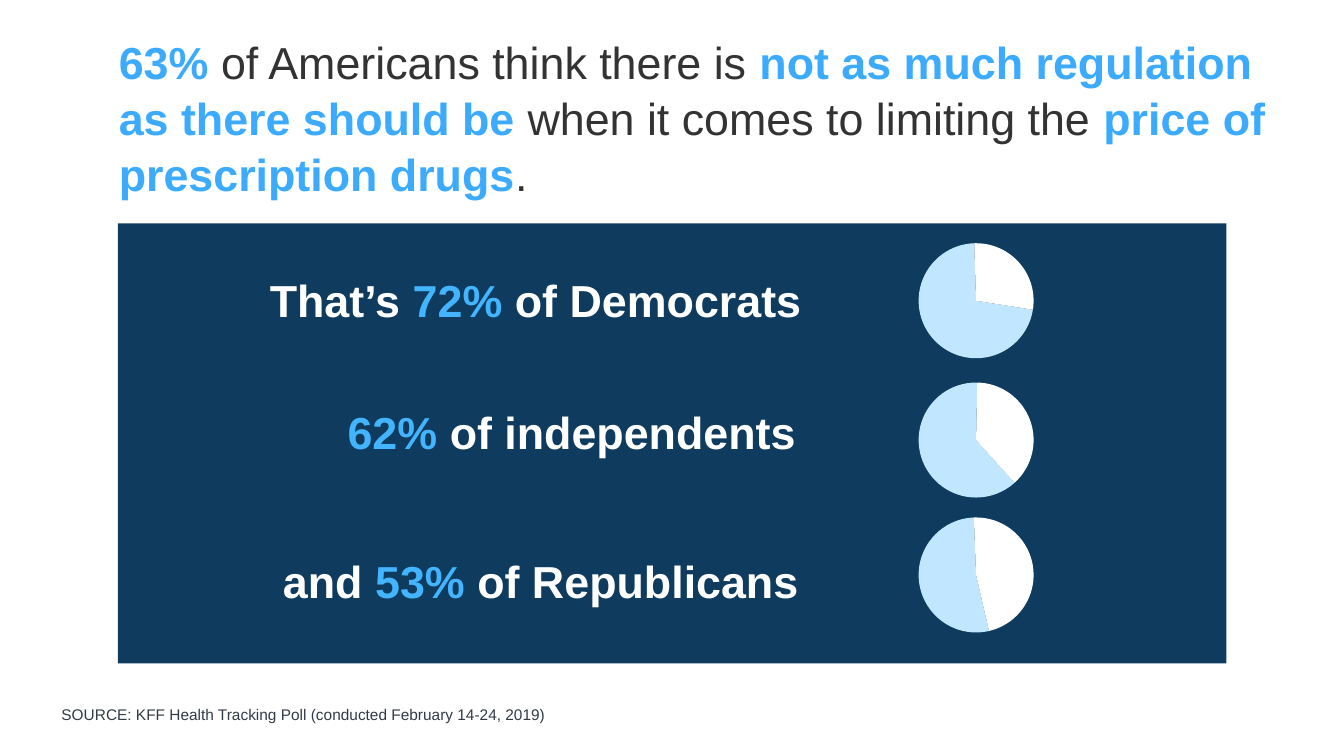
from lxml import etree
from pptx import Presentation
from pptx.chart.data import CategoryChartData
from pptx.dml.color import RGBColor
from pptx.enum.chart import XL_CHART_TYPE
from pptx.enum.shapes import MSO_SHAPE
from pptx.enum.text import MSO_ANCHOR, PP_ALIGN
from pptx.oxml.ns import qn
from pptx.util import Cm, Pt

WHITE, DARK, NAVY = "FFFFFF", "333333", "0E3B5E"
TITLE_BLUE, LABEL_BLUE, PIE_BLUE = "3CABFD", "43B4FF", "C1E6FF"
CHART_W, CHART_H = 11.48, 3.76
PIE_CENTER_X, PIE_SIZE = 24.6, 2.9


def rgb(color):
    return RGBColor.from_string(color)


def write(tf, runs, size):
    """Fill the first paragraph with (text, colour, bold) runs."""
    tf.word_wrap = True
    p = tf.paragraphs[0]
    p.alignment = PP_ALIGN.LEFT
    p.font.name = "Arial"
    p.font.size = Pt(size)
    for text, color, bold in runs:
        r = p.add_run()
        r.text = text
        r.font.color.rgb = rgb(color)
        r.font.bold = bold
    return p


prs = Presentation()
prs.slide_width, prs.slide_height = Cm(33.87), Cm(19.05)
s = prs.slides.add_slide(prs.slide_layouts[5])

# Title
title = s.shapes.title
title.left, title.top, title.width, title.height = Cm(2.74), Cm(0.7), Cm(29.85), Cm(2.54)
title.text_frame.vertical_anchor = MSO_ANCHOR.TOP
p = write(title.text_frame, [
    ("63% ", TITLE_BLUE, True),
    ("of Americans think there is ", DARK, False),
    ("not as much regulation as there should be ", TITLE_BLUE, True),
    ("when it comes to limiting the ", DARK, False),
    ("price of prescription drugs", TITLE_BLUE, True),
    (".", DARK, False),
], 32)
p.line_spacing = 1.04

# Source line
source = s.shapes.add_textbox(Cm(1.3), Cm(16.84), Cm(22.81), Cm(1.52))
source.text_frame.vertical_anchor = MSO_ANCHOR.BOTTOM
write(source.text_frame,
      [("SOURCE: KFF Health Tracking Poll (conducted February 14-24, 2019)", "323A45", False)], 11)

# Panel
panel = s.shapes.add_shape(MSO_SHAPE.RECTANGLE, Cm(2.97), Cm(5.63), Cm(27.94), Cm(11.09))
panel.shadow.inherit = False
panel.fill.solid()
panel.fill.fore_color.rgb = rgb(NAVY)
panel.line.fill.background()

# Party rows: lead-in, share, group, label (left, top, width),
# chart (left, top), pie offset from the chart top, start angle
rows = [
    ("That’s ", 72, "of Democrats", (6.55, 6.76, 14.0), (18.31, 5.97), 0.16, 99),
    ("", 62, "of independents", (8.51, 10.08, 12.04), (17.75, 9.3), 0.34, 138),
    ("and ", 53, "of Republicans", (6.88, 13.82, 13.64), (17.75, 12.7), 0.34, 167),
]
for lead, share, group, (left, top, width), (chart_x, chart_y), pie_y, angle in rows:
    label = s.shapes.add_textbox(Cm(left), Cm(top), Cm(width), Cm(1.62))
    runs = [(lead, WHITE, True), (f"{share}% ", LABEL_BLUE, True), (group, WHITE, True)]
    write(label.text_frame, [run for run in runs if run[0]], 32)

    data = CategoryChartData()
    data.categories = ["1", "2"]
    data.add_series("Series 1", (share, 100 - share))
    chart = s.shapes.add_chart(XL_CHART_TYPE.PIE, Cm(chart_x), Cm(chart_y),
                               Cm(CHART_W), Cm(CHART_H), data).chart
    chart.has_title = False
    chart.has_legend = False
    chart.font.name = "Arial"
    chart.font.size = Pt(13)
    chart.font.color.rgb = rgb(DARK)
    plot = chart.plots[0]
    plot.vary_by_categories = True
    for i, color in enumerate((PIE_BLUE, WHITE)):
        point = plot.series[0].points[i]
        point.format.fill.solid()
        point.format.fill.fore_color.rgb = rgb(color)
        point.format.line.fill.background()

    pie = plot._element
    for old in pie.findall(qn("c:firstSliceAng")):
        pie.remove(old)
    etree.SubElement(pie, qn("c:firstSliceAng")).set("val", str(angle))

    area = pie.getparent()
    for old in area.findall(qn("c:layout")):
        area.remove(old)
    layout = etree.Element(qn("c:layout"))
    area.insert(0, layout)
    manual = etree.SubElement(layout, qn("c:manualLayout"))
    pie_x = PIE_CENTER_X - PIE_SIZE / 2 - chart_x
    for tag, value in (("layoutTarget", "inner"), ("xMode", "edge"), ("yMode", "edge"),
                       ("x", pie_x / CHART_W), ("y", pie_y / CHART_H),
                       ("w", PIE_SIZE / CHART_W), ("h", PIE_SIZE / CHART_H)):
        etree.SubElement(manual, qn(f"c:{tag}")).set("val", str(value))

prs.save("out.pptx")
